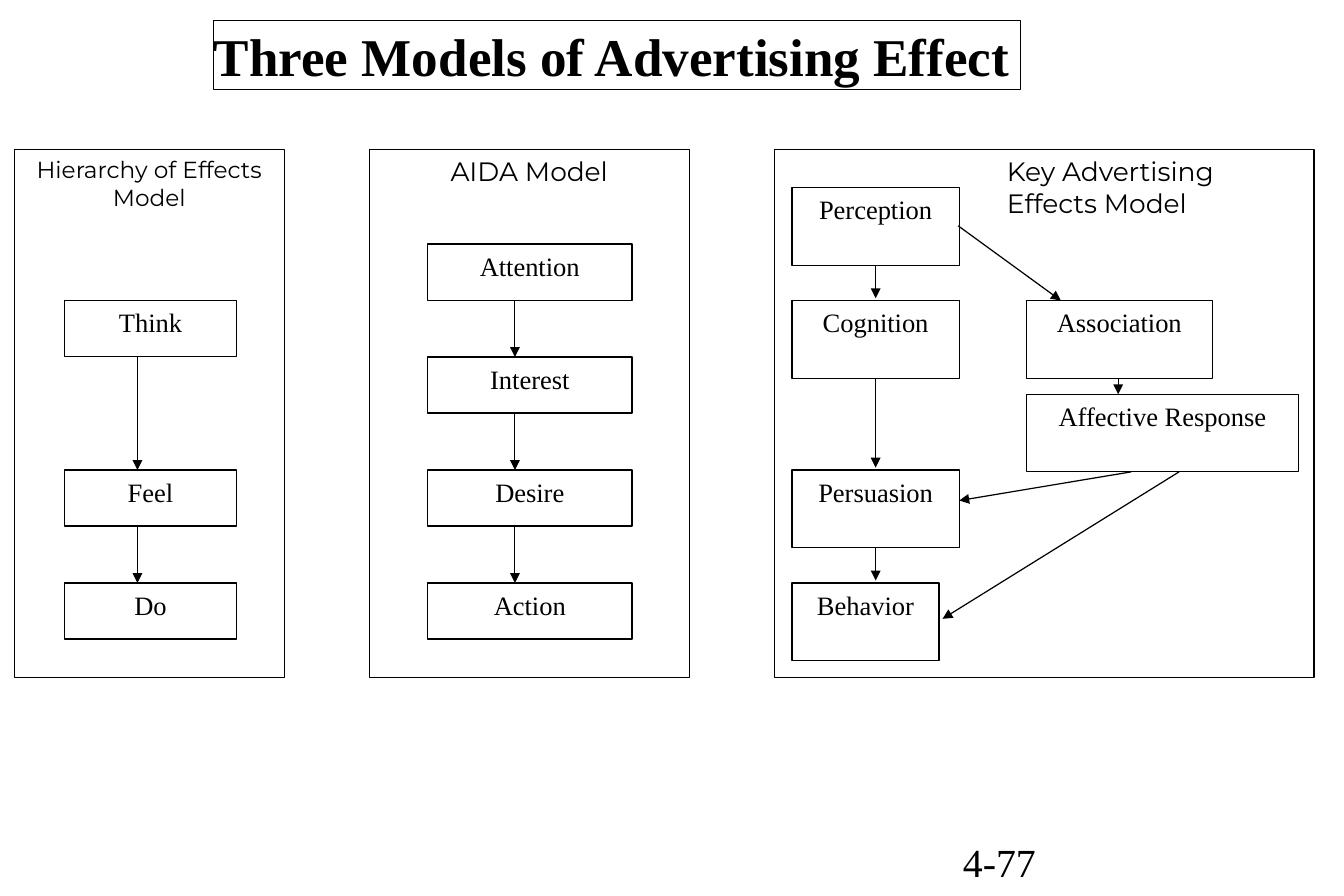
from dataclasses import dataclass

from lxml.etree import SubElement
from pptx import Presentation
from pptx.dml.color import RGBColor
from pptx.enum.shapes import MSO_CONNECTOR, MSO_SHAPE
from pptx.enum.text import MSO_ANCHOR, PP_ALIGN
from pptx.oxml.ns import qn
from pptx.slide import Slide
from pptx.text.text import TextFrame
from pptx.util import Inches, Pt

SERIF = "Times New Roman"
SANS = "Montserrat"
BLACK = "000000"
WHITE = "FFFFFF"
LINE_WIDTH = Pt(0.75)

FIRST_ROW, LAST_ROW = 1.57, 4.88
ROW_STEP = (LAST_ROW - FIRST_ROW) / 7
STAGE_HEIGHT = 0.47
TALL_HEIGHT = 0.65
PANEL_TOP, PANEL_HEIGHT = 1.25, 4.42


@dataclass
class Box:
    lines: list[str]
    left: float
    top: float
    width: float
    height: float
    font: str = SERIF
    size: int = 16
    indent: float = 0


@dataclass
class Arrow:
    start: tuple[float, float]
    end: tuple[float, float]


@dataclass
class Sequence:
    """A column of equal stages, each linked to the next by an arrow."""
    heading: str
    heading_size: int
    panel_left: float
    panel_width: float
    stage_left: float
    stage_width: float
    arrow_x: float
    stages: dict[str, int]


def row(number: int) -> float:
    return FIRST_ROW + number * ROW_STEP


def color(value: str) -> RGBColor:
    return RGBColor.from_string(value)


def write(frame: TextFrame, lines: list[str], font: str, size: int,
          align: PP_ALIGN, bold: bool = False, indent: float = 0) -> None:
    frame.word_wrap = True
    for number, line in enumerate(lines):
        paragraph = frame.add_paragraph() if number else frame.paragraphs[0]
        paragraph.alignment = align
        if indent:
            properties = paragraph._p.get_or_add_pPr()
            properties.set("marL", str(Inches(indent)))
            properties.set("indent", "0")
        run = paragraph.add_run()
        run.text = line
        run.font.name = font
        run.font.size = Pt(size)
        run.font.bold = bold
        run.font.color.rgb = color(BLACK)


def draw_box(slide: Slide, box: Box) -> None:
    shape = slide.shapes.add_shape(
        MSO_SHAPE.RECTANGLE, Inches(box.left), Inches(box.top),
        Inches(box.width), Inches(box.height))
    shape.shadow.inherit = False
    shape.fill.solid()
    shape.fill.fore_color.rgb = color(WHITE)
    shape.line.color.rgb = color(BLACK)
    shape.line.width = LINE_WIDTH
    shape.text_frame.vertical_anchor = MSO_ANCHOR.TOP
    align = PP_ALIGN.LEFT if box.indent else PP_ALIGN.CENTER
    write(shape.text_frame, box.lines, box.font, box.size, align,
          indent=box.indent)


def draw_arrow(slide: Slide, arrow: Arrow) -> None:
    ends = [Inches(value) for value in (*arrow.start, *arrow.end)]
    connector = slide.shapes.add_connector(MSO_CONNECTOR.STRAIGHT, *ends)
    connector.line.color.rgb = color(BLACK)
    connector.line.width = LINE_WIDTH
    SubElement(connector.line._get_or_add_ln(), qn("a:tailEnd"), type="triangle")
    SubElement(connector._element.spPr, qn("a:effectLst"))


def draw_sequence(slide: Slide, model: Sequence) -> None:
    draw_box(slide, Box([model.heading], model.panel_left, PANEL_TOP,
                        model.panel_width, PANEL_HEIGHT, SANS, model.heading_size))
    for stage, number in model.stages.items():
        draw_box(slide, Box([stage], model.stage_left, row(number),
                            model.stage_width, STAGE_HEIGHT))
    rows = list(model.stages.values())
    for upper, lower in zip(rows, rows[1:]):
        draw_arrow(slide, Arrow((model.arrow_x, row(upper) + STAGE_HEIGHT),
                                (model.arrow_x, row(lower))))


def draw_label(slide: Slide, label: Box, bold: bool = False,
               outlined: bool = False) -> None:
    """Draw unfilled text without insets."""
    text_box = slide.shapes.add_textbox(
        Inches(label.left), Inches(label.top),
        Inches(label.width), Inches(label.height))
    if outlined:
        text_box.line.color.rgb = color(BLACK)
        text_box.line.width = LINE_WIDTH
    frame = text_box.text_frame
    frame.margin_left = frame.margin_right = 0
    frame.margin_top = frame.margin_bottom = 0
    frame.vertical_anchor = MSO_ANCHOR.MIDDLE
    write(frame, label.lines, label.font, label.size, PP_ALIGN.LEFT, bold)


SEQUENCES = [
    Sequence("AIDA Model", 16, 3.09, 2.68, 3.58, 1.71, 4.31,
             {"Attention": 1, "Interest": 3, "Desire": 5, "Action": 7}),
    Sequence("Hierarchy of Effects Model", 14, 0.12, 2.26, 0.54, 1.44, 1.15,
             {"Think": 2, "Feel": 5, "Do": 7}),
]

KEY_LEFT, KEY_WIDTH, KEY_ARROW_X = 6.63, 1.4, 7.33
AFFECT_LEFT, AFFECT_TOP = 8.59, 3.3
AFFECT_BOTTOM = AFFECT_TOP + TALL_HEIGHT

KEY_BOXES = [
    Box(["Key Advertising", "Effects Model"], 6.48, PANEL_TOP, 4.52,
        PANEL_HEIGHT, SANS, indent=1.85),
    Box(["Perception"], KEY_LEFT, row(0), KEY_WIDTH, TALL_HEIGHT),
    Box(["Cognition"], KEY_LEFT, row(2), KEY_WIDTH, TALL_HEIGHT),
    Box(["Association"], AFFECT_LEFT, row(2), 1.56, TALL_HEIGHT),
    Box(["Affective Response"], AFFECT_LEFT, AFFECT_TOP, 2.28, TALL_HEIGHT),
    Box(["Persuasion"], KEY_LEFT, row(5), KEY_WIDTH, TALL_HEIGHT),
    Box(["Behavior"], KEY_LEFT, row(7), 1.23, TALL_HEIGHT),
]

KEY_ARROWS = [
    Arrow((KEY_ARROW_X, row(upper) + TALL_HEIGHT), (KEY_ARROW_X, row(lower) - 0.02))
    for upper, lower in ((0, 2), (2, 5), (5, 7))
] + [
    Arrow((8.02, 1.89), (8.88, row(2))),
    Arrow((9.36, row(2) + TALL_HEIGHT), (9.36, AFFECT_TOP)),
    Arrow((9.47, AFFECT_BOTTOM), (8.03, 4.19)),
    Arrow((9.87, AFFECT_BOTTOM), (7.89, 5.18)),
]


def main() -> None:
    presentation = Presentation()
    presentation.slide_width = Inches(11.25)
    presentation.slide_height = Inches(7.5)
    slide = presentation.slides.add_slide(presentation.slide_layouts[6])

    draw_label(slide, Box(["4-77"], 8.06, 7.02, 2.62, 0.38, size=24))
    for model in SEQUENCES:
        draw_sequence(slide, model)
    for box in KEY_BOXES:
        draw_box(slide, box)
    for arrow in KEY_ARROWS:
        draw_arrow(slide, arrow)
    draw_label(slide, Box(["Three Models of Advertising Effect"],
                          1.79, 0.17, 6.75, 0.58, size=32),
               bold=True, outlined=True)
    presentation.save("out.pptx")


if __name__ == "__main__":
    main()
